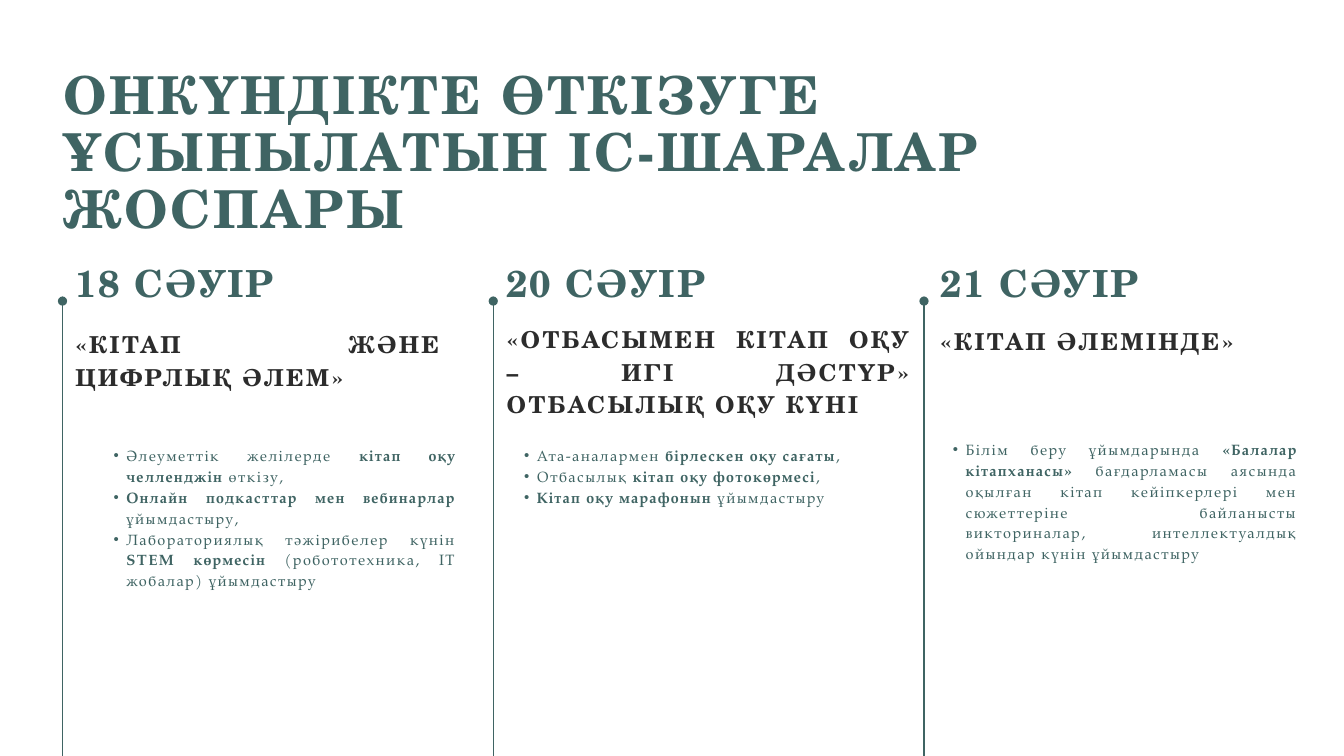
"""Build the slide with the three-day reading events plan."""
from typing import NamedTuple

from lxml.etree import SubElement
from pptx import Presentation
from pptx.dml.color import RGBColor
from pptx.enum.shapes import MSO_CONNECTOR
from pptx.enum.text import MSO_AUTO_SIZE, PP_ALIGN
from pptx.oxml.ns import qn
from pptx.slide import Slide
from pptx.util import Inches, Pt

TEAL = "3F6463"
DARK = "2C2C2C"


class Style(NamedTuple):
    """Look of a text: font, size, leading, tracking, colour and layout."""
    font: str
    size: float
    lead: float
    track: float
    color: str
    just: bool = False
    bullet: bool = False


class Box(NamedTuple):
    """Place of a text in inches."""
    left: float
    top: float
    width: float
    height: float


class Part(NamedTuple):
    """Piece of text with one weight."""
    text: str
    bold: bool = False


class Day(NamedTuple):
    """Column with a date, a theme and a list of events."""
    line: float
    date: str
    date_box: Box
    theme: str
    theme_box: Box
    events: list[list[Part]]
    event_box: Box


TITLE = Style("TeX Gyre Schola", 56, 61, 2.8, TEAL)
DATE = Style("TeX Gyre Schola", 40, 43.6, 2, TEAL)
THEME = Style("TeX Gyre Schola", 25, 35, 2.5, DARK, just=True)
EVENT = Style("TeX Gyre Pagella", 16, 22.4, 1.6, TEAL, just=True, bullet=True)

DAYS = [
    Day(
        0.93,
        "18 СӘУІР", Box(1.12, 3.93, 5.14, 0.61),
        "«КІТАП ЖӘНЕ ЦИФРЛЫҚ ӘЛЕМ»", Box(1.12, 4.85, 5.45, 0.95),
        [
            [Part("Әлеуметтік желілерде "), Part("кітап оқу челленджін", True),
             Part(" өткізу,")],
            [Part("Онлайн подкасттар мен вебинарлар", True),
             Part(" ұйымдастыру, ")],
            [Part("Лабораториялық тәжірибелер күнін "),
             Part("STEM көрмесін", True),
             Part(" (робототехника, IT жобалар) ұйымдастыру")],
        ],
        Box(1.5, 6.6, 5.29, 2.1),
    ),
    Day(
        7.34,
        "20 СӘУІР", Box(7.54, 3.93, 5.14, 0.61),
        "«ОТБАСЫМЕН КІТАП ОҚУ – ИГІ ДӘСТҮР» ОТБАСЫЛЫҚ ОҚУ КҮНІ",
        Box(7.54, 4.77, 6.02, 1.43),
        [
            [Part("Ата-аналармен "), Part("бірлескен оқу сағаты", True),
             Part(",")],
            [Part("Отбасылық "), Part("кітап оқу фотокөрмесі", True),
             Part(",")],
            [Part("Кітап оқу марафонын", True), Part(" ұйымдастыру")],
        ],
        Box(7.61, 6.6, 5.56, 0.89),
    ),
    Day(
        13.75,
        "21 СӘУІР", Box(13.99, 3.93, 5.14, 0.61),
        "«КІТАП ӘЛЕМІНДЕ»", Box(13.99, 4.8, 5.32, 0.46),
        [
            [Part("Білім беру ұйымдарында "),
             Part("«Балалар кітапханасы» ", True),
             Part("бағдарламасы аясында оқылған кітап кейіпкерлері мен "
                  "сюжеттеріне байланысты викториналар, интеллектуалдық "
                  "ойындар күнін ұйымдастыру")],
        ],
        Box(13.99, 6.51, 5.32, 1.85),
    ),
]


def paint(value: str) -> RGBColor:
    """Turn a hex string into a colour."""
    return RGBColor.from_string(value)


def add_text(slide: Slide, box: Box, style: Style,
             paras: list[list[Part]]) -> None:
    """Add a text box, run by run."""
    shape = slide.shapes.add_textbox(*(Inches(n) for n in box))
    frame = shape.text_frame
    frame.word_wrap = True
    frame.auto_size = MSO_AUTO_SIZE.SHAPE_TO_FIT_TEXT
    frame.margin_left = frame.margin_right = Inches(0)
    frame.margin_top = frame.margin_bottom = Inches(0)
    for i, parts in enumerate(paras):
        para = frame.add_paragraph() if i else frame.paragraphs[0]
        para.line_spacing = Pt(style.lead)
        para.alignment = PP_ALIGN.JUSTIFY if style.just else PP_ALIGN.LEFT
        if style.bullet:
            para.level = 1
            props = para._p.get_or_add_pPr()
            props.set("marL", str(Inches(0.38)))
            props.set("indent", str(Inches(-0.19)))
            SubElement(props, qn("a:buFont"), typeface="Arial")
            SubElement(props, qn("a:buChar"), char="•")
        for part in parts:
            run = para.add_run()
            run.text = part.text
            run.font.name = style.font
            run.font.size = Pt(style.size)
            run.font.bold = part.bold
            run.font.color.rgb = paint(style.color)
            run._r.get_or_add_rPr().set("spc", str(round(style.track * 100)))


def add_line(slide: Slide, left: float) -> None:
    """Add a rule that rises from the slide's foot to a dot."""
    line = slide.shapes.add_connector(
        MSO_CONNECTOR.STRAIGHT,
        Inches(left), Inches(11.25), Inches(left), Inches(4.48))
    line.line.color.rgb = paint(TEAL)
    line.line.width = Pt(1.5)
    SubElement(line.line._get_or_add_ln(), qn("a:tailEnd"),
               type="oval", w="lg", len="lg")
    SubElement(line._element.spPr, qn("a:effectLst"))


def add_day(slide: Slide, day: Day) -> None:
    """Add one column of the plan."""
    add_line(slide, day.line)
    add_text(slide, day.date_box, DATE, [[Part(day.date, True)]])
    add_text(slide, day.theme_box, THEME, [[Part(day.theme, True)]])
    add_text(slide, day.event_box, EVENT, day.events)


def main() -> None:
    """Build and save the slide."""
    deck = Presentation()
    deck.slide_width = Inches(20)
    deck.slide_height = Inches(11.25)
    slide = deck.slides.add_slide(deck.slide_layouts[6])
    title = "ОНКҮНДІКТЕ ӨТКІЗУГЕ ҰСЫНЫЛАТЫН ІС-ШАРАЛАР ЖОСПАРЫ"
    add_text(slide, Box(0.94, 1.01, 18.14, 1.7), TITLE, [[Part(title, True)]])
    for day in DAYS:
        add_day(slide, day)
    deck.save("out.pptx")


if __name__ == "__main__":
    main()
